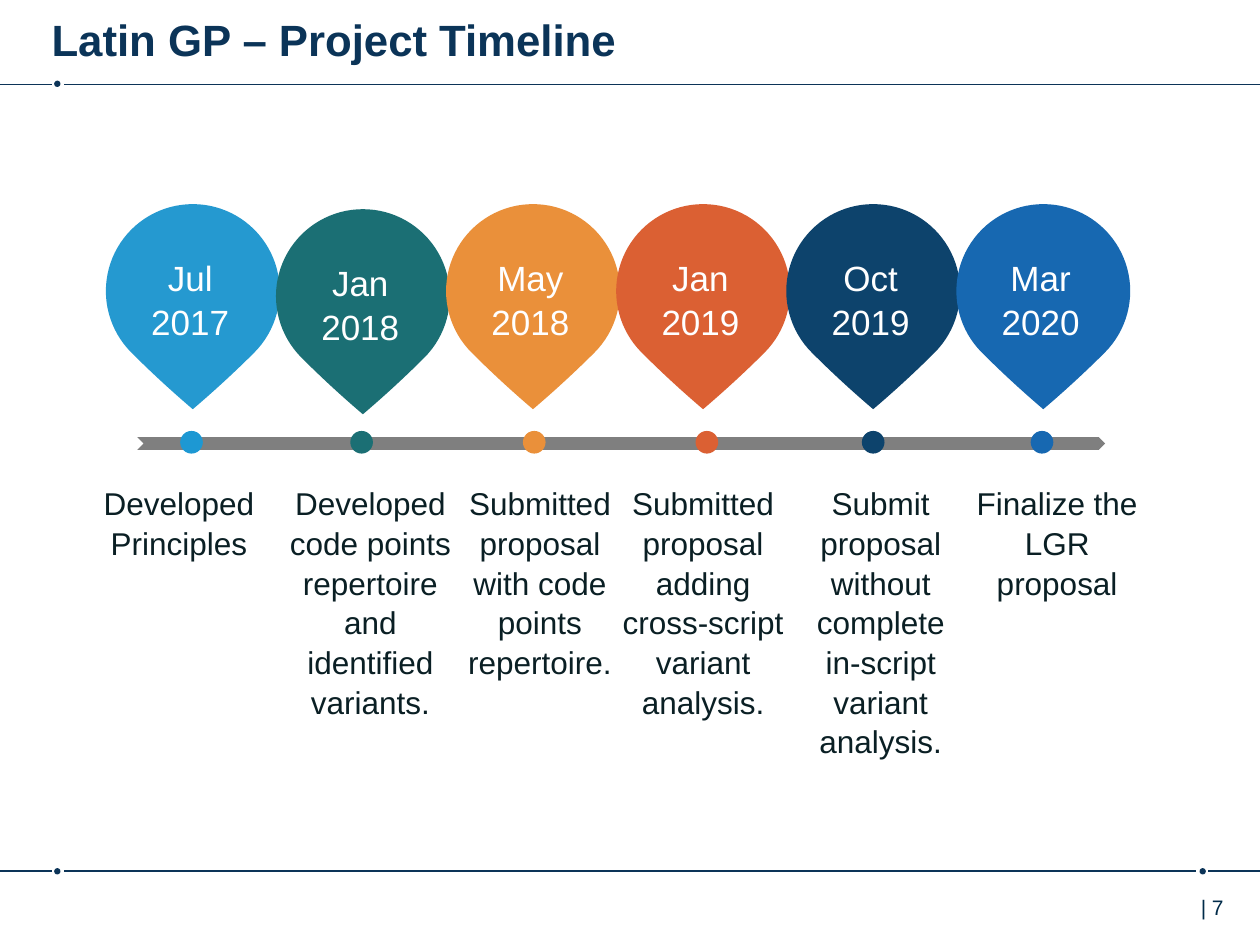
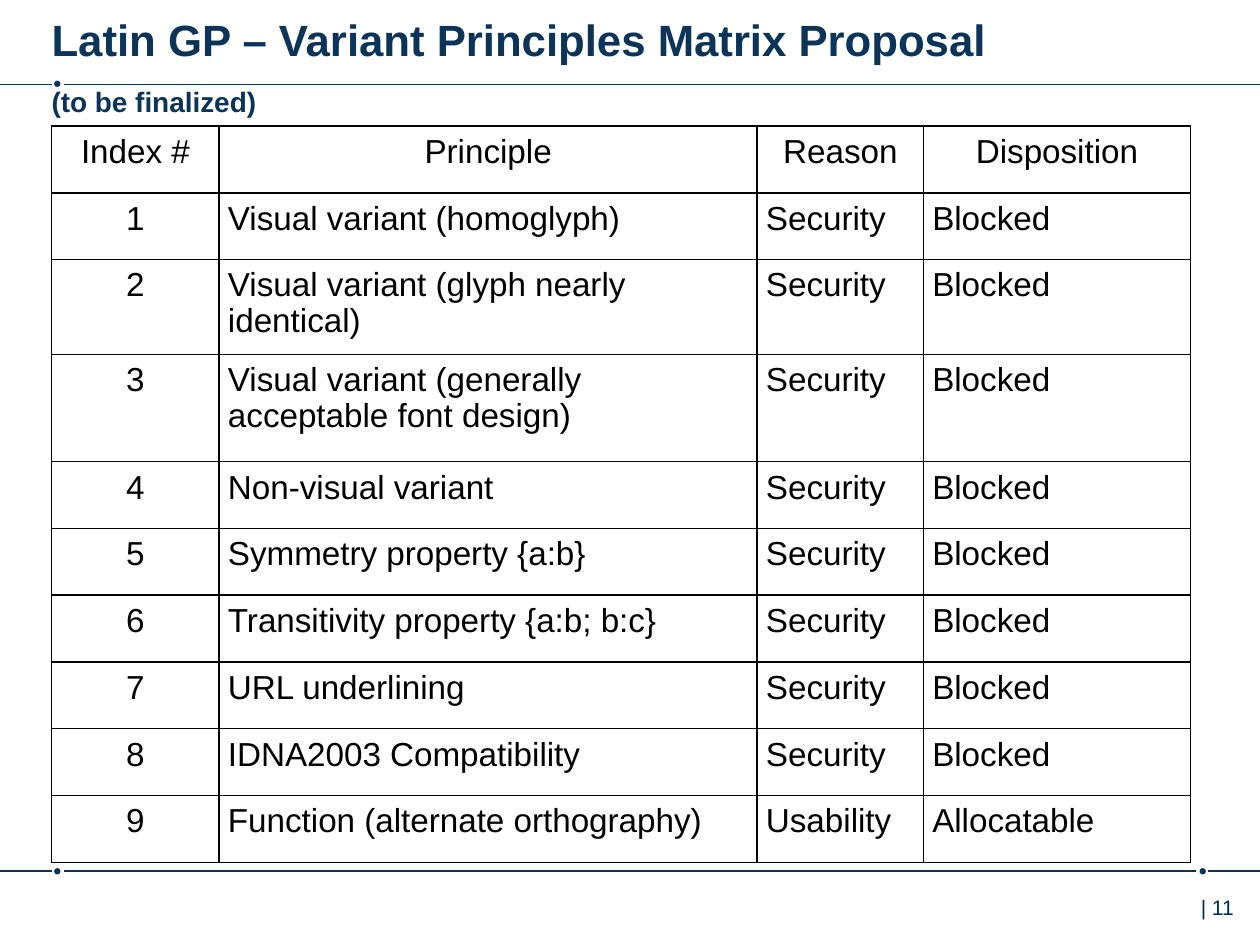
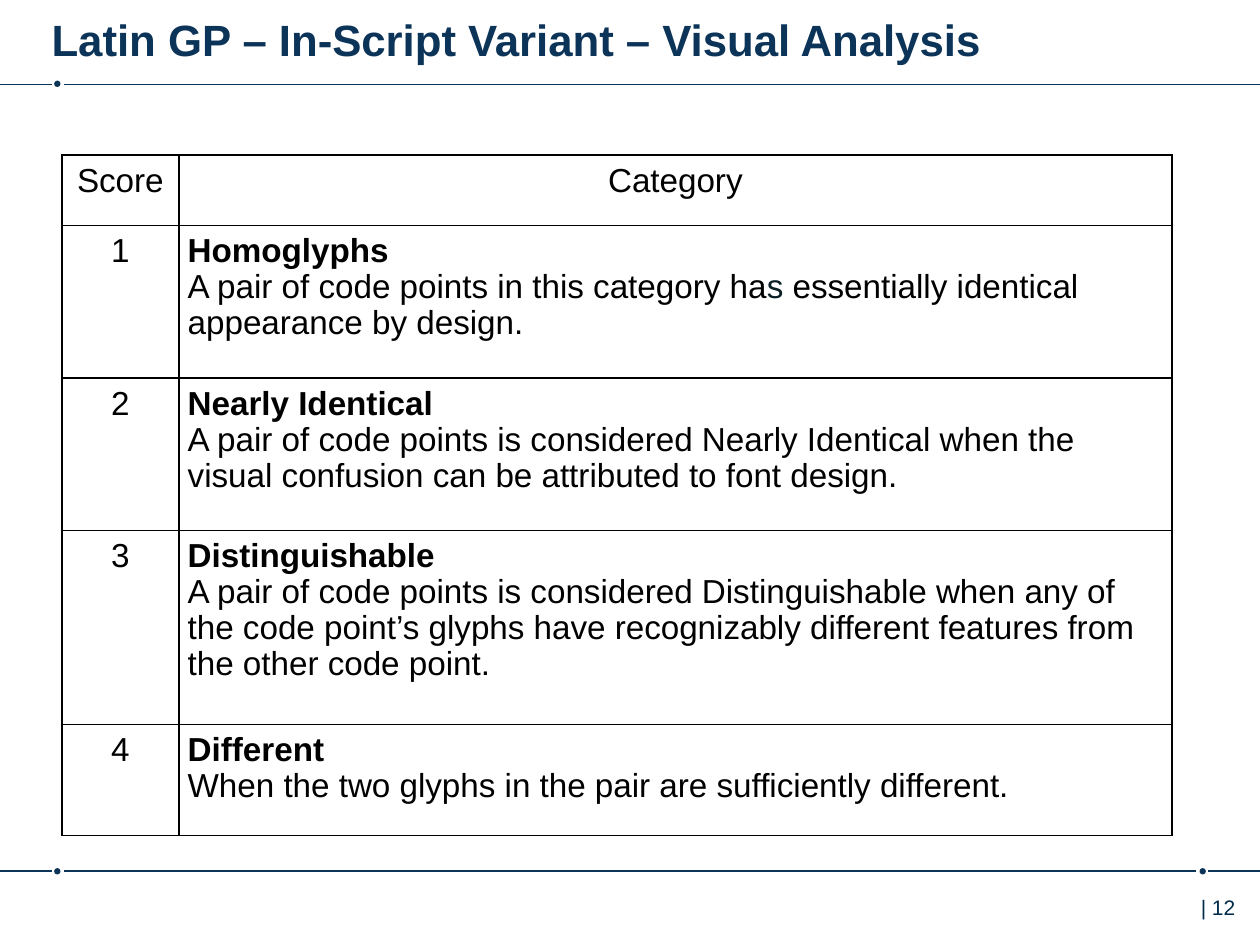
from lxml import etree
from pptx import Presentation
from pptx.dml.color import RGBColor
from pptx.enum.shapes import MSO_CONNECTOR, MSO_SHAPE
from pptx.enum.text import PP_ALIGN
from pptx.oxml.ns import qn
from pptx.util import Inches, Pt

STRAIGHT = MSO_CONNECTOR.STRAIGHT
OVAL, CHEVRON, TEARDROP = MSO_SHAPE.OVAL, MSO_SHAPE.CHEVRON, MSO_SHAPE.TEAR
LEFT, CENTER = PP_ALIGN.LEFT, PP_ALIGN.CENTER

FONT = "Arial"
COLORS = {
    "rule": "0C3458", "title": "0B3458", "number": "002B49", "label": "0A1F24",
    "bar": "7F7F7F", "white": "FFFFFF", "black": "000000",
    "sky": "2599D0", "sky_dot": "1D98D3", "teal": "1B6F74", "amber": "EA903A",
    "orange": "DB6033", "navy": "0D436C", "blue": "1768B1",
}

# Pin month, year, colour, pin top, dot left, label left, label width, label
MILESTONES = [
    ("Jul", "2017", "sky", 1.62, 1.43, 0.66, 1.52, "Developed Principles"),
    ("Jan", "2018", "teal", 1.66, 2.78, 2.16, 1.56,
     "Developed code points repertoire and identified variants."),
    ("May", "2018", "amber", 1.62, 4.15, 3.59, 1.39,
     "Submitted proposal with code points repertoire."),
    ("Jan", "2019", "orange", 1.62, 5.52, 4.82, 1.52,
     "Submitted proposal adding cross-script variant analysis."),
    ("Oct", "2019", "navy", 1.62, 6.84, 6.34, 1.3,
     "Submit proposal without complete in-script variant analysis."),
    ("Mar", "2020", "blue", 1.62, 8.18, 7.63, 1.52, "Finalize the LGR proposal"),
]

PRINCIPLES = [
    ("Visual variant (homoglyph)", "Security", "Blocked"),
    ("Visual variant (glyph nearly identical)", "Security", "Blocked"),
    ("Visual variant (generally acceptable font design)", "Security", "Blocked"),
    ("Non-visual variant", "Security", "Blocked"),
    ("Symmetry property {a:b}", "Security", "Blocked"),
    ("Transitivity property {a:b; b:c}", "Security", "Blocked"),
    ("URL underlining", "Security", "Blocked"),
    ("IDNA2003 Compatibility", "Security", "Blocked"),
    ("Function (alternate orthography)", "Usability", "Allocatable"),
]

CATEGORIES = [
    "Homoglyphs\nA pair of code points in this category has essentially identical "
    "appearance by design.",
    "Nearly Identical\nA pair of code points is considered Nearly Identical when the "
    "visual confusion can be attributed to font design.",
    "Distinguishable\nA pair of code points is considered Distinguishable when any of "
    "the code point’s glyphs have recognizably different features from the other "
    "code point.",
    "Different\nWhen the two glyphs in the pair are sufficiently different.",
]


def rgb(name):
    return RGBColor.from_string(COLORS[name])


def style_run(span, size, color, bold=False):
    span.font.name = FONT
    span.font.size = Pt(size)
    span.font.bold = bold
    span.font.color.rgb = rgb(color)


def write(frame, text, size, color, align=LEFT, bold=False, spacing=None):
    """Fill a text frame, one paragraph for each line of text."""
    frame.word_wrap = True
    frame.text = text
    for para in frame.paragraphs:
        para.alignment = align
        para.line_spacing = spacing
        for span in para.runs:
            style_run(span, size, color, bold)


def add_text(page, left, top, width, height, text, size, color, inset=0.1, **style):
    box = page.shapes.add_textbox(Inches(left), Inches(top), Inches(width), Inches(height))
    frame = box.text_frame
    frame.margin_left = Inches(inset)
    write(frame, text, size, color, **style)
    return frame


def add_filled(page, kind, left, top, width, height, color):
    shape = page.shapes.add_shape(
        kind, Inches(left), Inches(top), Inches(width), Inches(height))
    shape.shadow.inherit = False
    shape.fill.solid()
    shape.fill.fore_color.rgb = rgb(color)
    shape.line.fill.background()
    return shape


def add_rule(page, start, end, y):
    rule = page.shapes.add_connector(
        STRAIGHT, Inches(start), Inches(y), Inches(end), Inches(y))
    rule.line.color.rgb = rgb("rule")
    rule.line.width = Pt(1)
    etree.SubElement(rule._element.spPr, qn("a:effectLst"))


def add_page(deck, title, number):
    """Blank page with title, dotted rules above and below, and page number."""
    page = deck.slides.add_slide(deck.slide_layouts[6])
    for left, top in ((0.43, 0.64), (0.43, 6.89), (9.52, 6.89)):
        add_filled(page, OVAL, left, top, 0.05, 0.05, "rule")
    for start, end, y in ((0, 0.41, 0.67), (0.51, 10, 0.67),
                          (0, 0.41, 6.91), (0.51, 9.49, 6.91), (9.59, 10, 6.91)):
        add_rule(page, start, end, y)
    add_text(page, 9.29, 7.05, 0.87, 0.4, f"| {number}", 12, "number", inset=0.24)
    heading = add_text(page, 0.41, 0.05, 8.76, 0.49, title, 25, "title",
                       inset=0, bold=True)
    heading.margin_right = 0
    return page, heading


def add_border(cell):
    properties = cell._tc.get_or_add_tcPr()
    for position, side in enumerate(("lnL", "lnR", "lnT", "lnB")):
        line = etree.Element(qn(f"a:{side}"), w=str(Pt(1)))
        fill = etree.SubElement(line, qn("a:solidFill"))
        etree.SubElement(fill, qn("a:srgbClr"), val=COLORS["black"])
        properties.insert(position, line)


def add_grid(page, left, top, widths, heights, rows):
    """Bordered table with a centred header row and index column."""
    table = page.shapes.add_table(
        len(rows), len(widths), Inches(left), Inches(top),
        Inches(sum(widths)), Inches(sum(heights))).table
    table.first_row = table.horz_banding = False
    for column, width in zip(table.columns, widths):
        column.width = Inches(width)
    for r, (height, values) in enumerate(zip(heights, rows)):
        table.rows[r].height = Inches(height)
        for c, value in enumerate(values):
            cell = table.cell(r, c)
            cell.margin_left = cell.margin_right = Inches(0.07)
            cell.margin_top = cell.margin_bottom = Inches(0.07)
            cell.fill.background()
            add_border(cell)
            align = CENTER if r == 0 or c == 0 else LEFT
            write(cell.text_frame, value, 19, "black", align=align, spacing=0.97)
    return table


def add_milestone(page, index, milestone):
    month, year, color, top, dot_left, label_left, label_width, label = milestone
    left = 0.84 + 1.35 * index
    dot_color = "sky_dot" if color == "sky" else color
    add_filled(page, OVAL, dot_left, 3.42, 0.18, 0.18, dot_color)
    pin = add_filled(page, TEARDROP, left, top, 1.38, 1.38, color)
    pin.adjustments[0] = 0.961
    pin.rotation = 135
    add_text(page, left + 0.02, top + 0.35, 1.3, 0.71, f"{month}\n{year}", 20, "white",
             align=CENTER, spacing=1.05)
    add_text(page, label_left, 3.78, label_width, 1.72, label, 18, "label",
             align=CENTER, spacing=1.05)


def build_timeline(deck):
    page, _ = add_page(deck, "Latin GP – Project Timeline", 7)
    add_filled(page, CHEVRON, 1.09, 3.47, 7.68, 0.1, "bar")
    for index, milestone in enumerate(MILESTONES):
        add_milestone(page, index, milestone)


def build_principles(deck):
    page, heading = add_page(
        deck, "Latin GP – Variant Principles Matrix Proposal\n(to be finalized)", 11)
    subtitle = heading.paragraphs[1]
    subtitle.space_before = Pt(11)
    subtitle.runs[0].font.size = Pt(16)
    rows = [("Index #", "Principle", "Reason", "Disposition")]
    rows += [(str(n), *principle) for n, principle in enumerate(PRINCIPLES, 1)]
    heights = [0.53, 0.53, 0.73, 0.85] + [0.53] * 6
    add_grid(page, 0.41, 1, [1.33, 4.27, 1.32, 2.12], heights, rows)


def build_categories(deck):
    page, _ = add_page(deck, "Latin GP – In-Script Variant – Visual Analysis", 12)
    rows = [("Score", "Category")]
    rows += [(str(n), category) for n, category in enumerate(CATEGORIES, 1)]
    table = add_grid(page, 0.49, 1.23, [0.93, 7.88], [0.56, 1.21, 1.21, 1.54, 0.88], rows)
    for r in range(1, len(rows)):
        table.cell(r, 1).text_frame.paragraphs[0].runs[0].font.bold = True

    # The final letter of "has" is tinted
    para = table.cell(1, 1).text_frame.paragraphs[1]
    before, after = para.text.split("has ")
    para.text = before + "ha"
    for text in ("s", f" {after}"):
        para.add_run().text = text
    for span, color in zip(para.runs, ("black", "label", "black")):
        style_run(span, 19, color)


def main():
    deck = Presentation()
    deck.slide_width, deck.slide_height = Inches(10), Inches(7.5)
    build_timeline(deck)
    build_principles(deck)
    build_categories(deck)
    deck.save("out.pptx")


if __name__ == "__main__":
    main()
